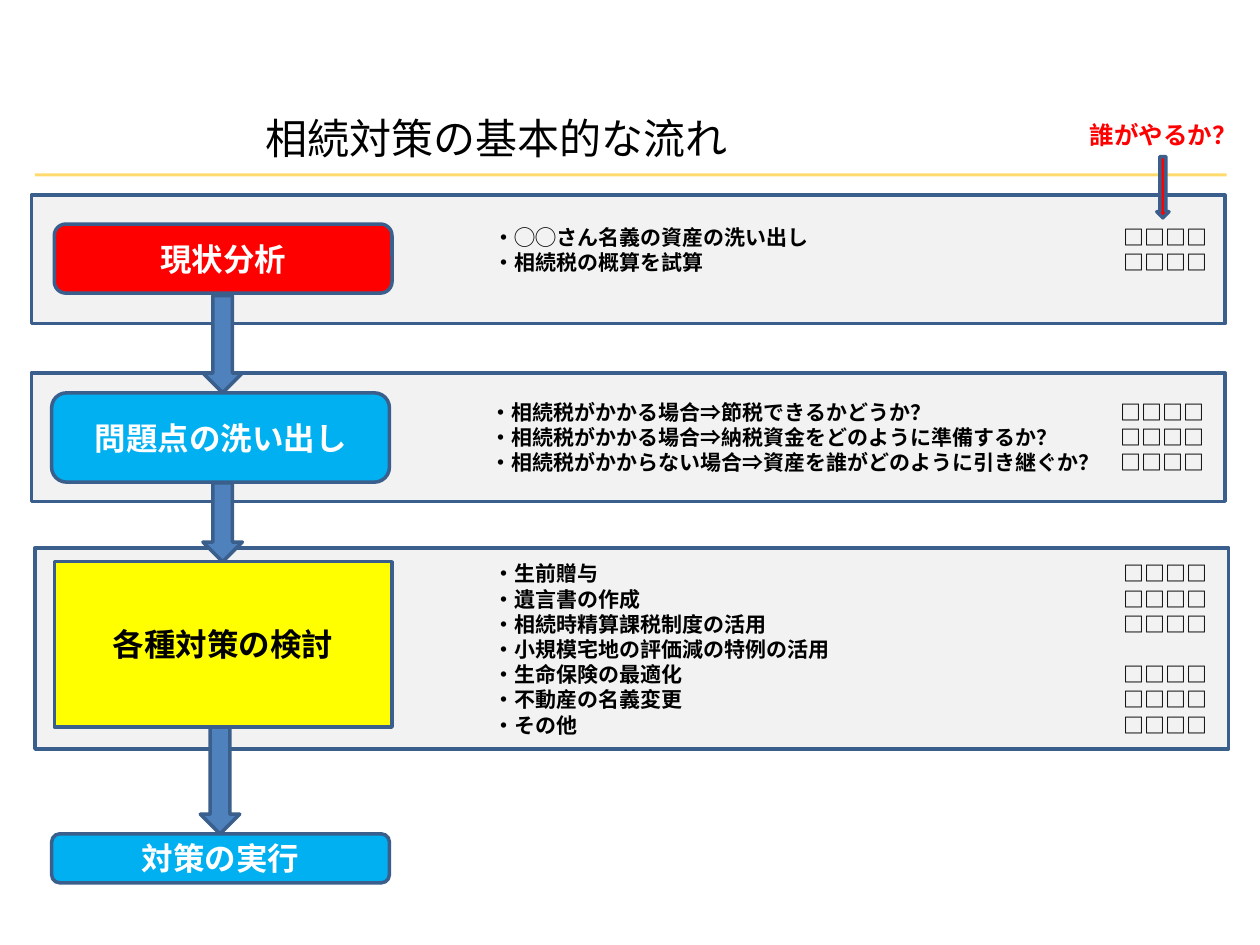
from lxml import etree
from pptx import Presentation
from pptx.dml.color import RGBColor
from pptx.enum.shapes import MSO_CONNECTOR, MSO_SHAPE
from pptx.enum.text import MSO_ANCHOR, MSO_AUTO_SIZE, PP_ALIGN
from pptx.oxml.ns import qn
from pptx.util import Pt

RECT = MSO_SHAPE.RECTANGLE
ROUND = MSO_SHAPE.ROUNDED_RECTANGLE
DOWN = MSO_SHAPE.DOWN_ARROW
STRAIGHT = MSO_CONNECTOR.STRAIGHT
MIDDLE = MSO_ANCHOR.MIDDLE
GROW = MSO_AUTO_SIZE.SHAPE_TO_FIT_TEXT
LEFT, CENTER = PP_ALIGN.LEFT, PP_ALIGN.CENTER

BLACK = RGBColor(0x00, 0x00, 0x00)
WHITE = RGBColor(0xFF, 0xFF, 0xFF)
RED = RGBColor(0xFF, 0x00, 0x00)
YELLOW = RGBColor(0xFF, 0xFF, 0x00)
SKY = RGBColor(0x00, 0xB0, 0xF0)
BLUE = RGBColor(0x4F, 0x81, 0xBD)
NAVY = RGBColor(0x3A, 0x5F, 0x8C)
GREY = RGBColor(0xF2, 0xF2, 0xF2)
GOLD = RGBColor(0xFF, 0xC0, 0x00)

FONT = "Calibri"
CHECKS = "□□□□"
CHECK_TAB = 360  # distance from the list's text edge to the check boxes

# Each box is left, top, width, height
PANELS = [(20, 313, 682, 115), (18, 213, 682, 73.5), (18, 111.5, 682, 73.5)]

STEPS = [
    ("現状分析", ROUND, (31, 128, 193, 39.5), RED, WHITE),
    ("問題点の洗い出し", ROUND, (29.5, 224.5, 193, 51), SKY, WHITE),
    ("各種対策の検討", RECT, (31, 321, 193, 94.5), YELLOW, BLACK),
    ("対策の実行", ROUND, (29.5, 476.5, 193, 28), SKY, WHITE),
]

# Each task is its wording and whether it has check boxes
LISTS = [
    ((275, 124.5, 426, 36), [
        ("◯◯さん名義の資産の洗い出し", True),
        ("相続税の概算を試算", True),
    ]),
    ((273.5, 224.5, 426, 51), [
        ("相続税がかかる場合⇒節税できるかどうか？", True),
        ("相続税がかかる場合⇒納税資金をどのように準備するか？", True),
        ("相続税がかからない場合⇒資産を誰がどのように引き継ぐか？", True),
    ]),
    ((275, 317, 426, 108.5), [
        ("生前贈与", True),
        ("遺言書の作成", True),
        ("相続時精算課税制度の活用", True),
        ("小規模宅地の評価減の特例の活用", False),
        ("生命保険の最適化", True),
        ("不動産の名義変更", True),
        ("その他", True),
    ]),
]

ARROWS = [
    ((116, 169, 22.5, 55.5), BLUE),
    ((116, 276, 22.5, 45), BLUE),
    ((114.5, 415.5, 22.5, 61), BLUE),
    ((661, 89.5, 7, 35), RED),
]


def points(box):
    return [Pt(n) for n in box]


def style_text(frame, size, color, bold, align):
    for para in frame.paragraphs:
        para.alignment = align
        for run in para.runs:
            font = run.font
            font.name, font.size, font.bold = FONT, Pt(size), bold
            font.color.rgb = color


def add_block(slide, kind, box, fill):
    shape = slide.shapes.add_shape(kind, *points(box))
    shape.shadow.inherit = False
    shape.fill.solid()
    shape.fill.fore_color.rgb = fill
    shape.line.color.rgb = NAVY
    shape.line.width = Pt(2)
    return shape


def add_step(slide, text, kind, box, fill, color):
    frame = add_block(slide, kind, box, fill).text_frame
    frame.vertical_anchor = MIDDLE
    frame.text = text
    style_text(frame, 18, color, True, CENTER)


def add_text(slide, text, box, size, color, bold=True, align=LEFT):
    frame = slide.shapes.add_textbox(*points(box)).text_frame
    frame.word_wrap = False
    frame.auto_size = GROW
    frame.text = text
    style_text(frame, size, color, bold, align)
    return frame


def add_list(slide, box, tasks):
    lines = [f"・{task}" + (f"\t{CHECKS}" if check else "")
             for task, check in tasks]
    frame = add_text(slide, "\n".join(lines), box, 12, BLACK)
    for para in frame.paragraphs:
        tabs = etree.SubElement(para._p.get_or_add_pPr(), qn("a:tabLst"))
        etree.SubElement(tabs, qn("a:tab"), pos=str(Pt(CHECK_TAB)), algn="l")


def add_rule(slide, left, right, top):
    rule = slide.shapes.add_connector(STRAIGHT, *points((left, top, right, top)))
    rule.line.color.rgb = GOLD
    rule.line.width = Pt(1.75)
    color = rule.line._ln.find(".//" + qn("a:srgbClr"))
    etree.SubElement(color, qn("a:alpha"), val="57000")
    etree.SubElement(rule._element.spPr, qn("a:effectLst"))


def main():
    deck = Presentation()
    deck.slide_width, deck.slide_height = Pt(720), Pt(540)
    slide = deck.slides.add_slide(deck.slide_layouts[6])

    # Background panels
    for box in PANELS:
        add_block(slide, RECT, box, GREY)

    # Heading
    add_rule(slide, 20, 701, 100)
    add_text(slide, "相続対策の基本的な流れ", (144.5, 60.5, 281, 36), 24, BLACK, False)

    # Steps and their tasks
    for step in STEPS:
        add_step(slide, *step)
    for box, tasks in LISTS:
        add_list(slide, box, tasks)

    # Label over the check boxes
    add_text(slide, "誰がやるか？", (615, 65, 99.5, 24.5), 14, RED, align=CENTER)

    # Arrows between the steps and down to the check boxes
    for box, fill in ARROWS:
        add_block(slide, DOWN, box, fill)

    deck.save("out.pptx")


if __name__ == "__main__":
    main()
